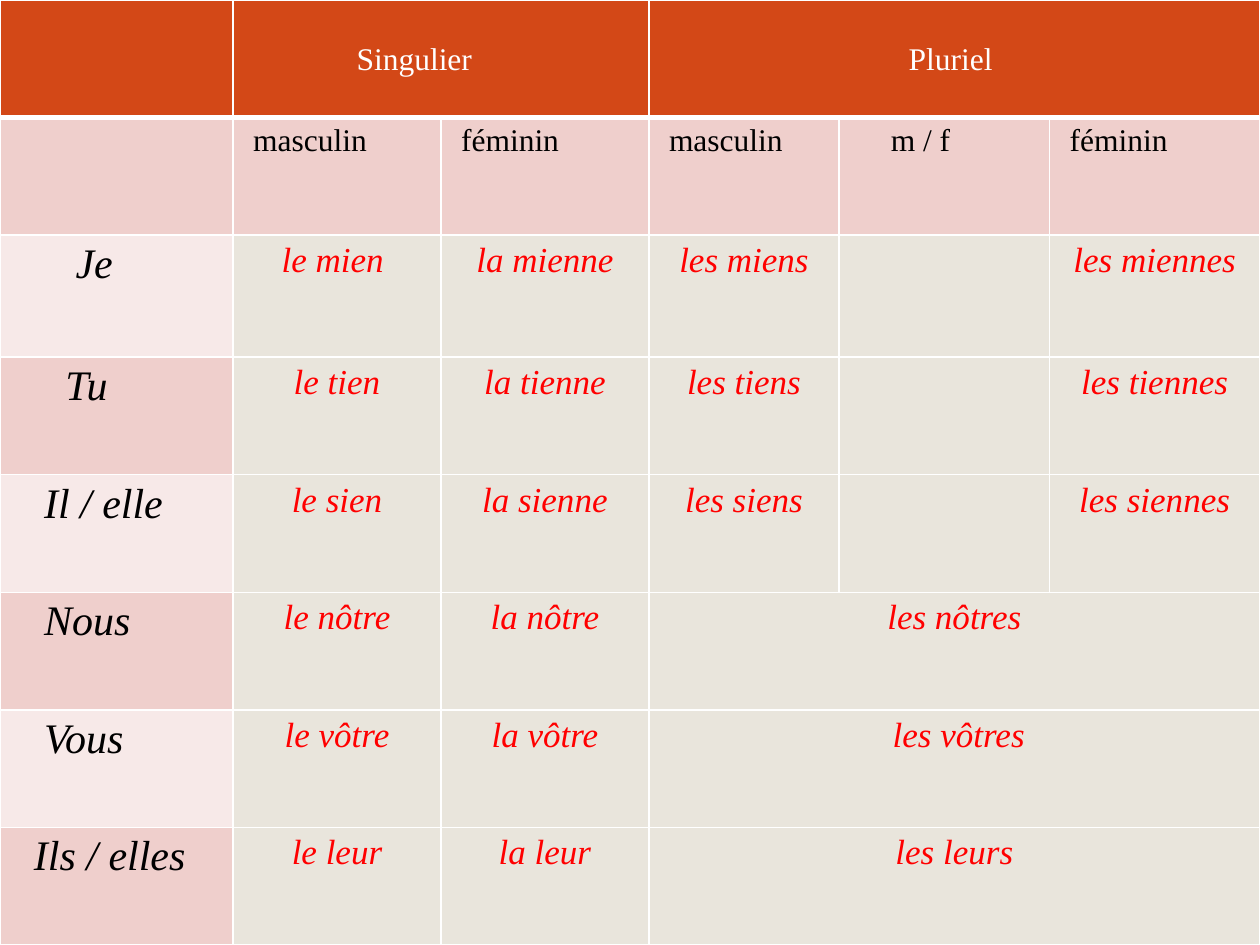
from lxml import etree
from pptx import Presentation
from pptx.dml.color import RGBColor
from pptx.enum import text
from pptx.oxml import ns
from pptx.util import Inches, Pt

COLORS = {
    "header": "D34817", "dark": "EFCFCC", "light": "F7E9E8", "body": "E9E5DC",
    "white": "FFFFFF", "black": "000000", "red": "FF0000",
}
COL_WIDTHS = [1.85, 1.65, 1.65, 1.51, 1.67, 1.67]
JE_HEIGHT = 0.97
ROW_HEIGHT = (7.5 - JE_HEIGHT) / 7
SUBHEADS = [("masculin", 0.06), ("féminin", 0.06), ("masculin", 0.06),
            ("m / f", 0.31), ("féminin", 0.06)]
# Pronoun, its indent, then the possessives by column
PRONOUNS = [
    ("Je", 0.5, ["le mien", "la mienne", "les miens", "", "les miennes"]),
    ("Tu", 0.42, ["le tien", "la tienne", "les tiens", "", "les tiennes"]),
    ("Il / elle", 0.25, ["le sien", "la sienne", "les siens", "", "les siennes"]),
    ("Nous", 0.25, ["le nôtre", "la nôtre", "les nôtres"]),
    ("Vous", 0.25, ["le vôtre", "la vôtre", "les vôtres"]),
    ("Ils / elles", 0.17, ["le leur", "la leur", "les leurs"]),
]


def rgb(name):
    return RGBColor.from_string(COLORS[name])


def write(cell, content, size=18, color="black", italic=False, center=False,
          indent=0, tail=0, drop=0):
    """Put formatted text in a cell; indent, tail and drop widen its margins."""
    cell.margin_left = Inches(0.1 + indent)
    cell.margin_right = Inches(0.1 + tail)
    cell.margin_top = Inches(0.05 + drop)
    p = cell.text_frame.paragraphs[0]
    p.alignment = text.PP_ALIGN.CENTER if center else text.PP_ALIGN.LEFT
    r = p.add_run()
    r.text = content
    r.font.name = "Times New Roman"
    r.font.size = Pt(size)
    r.font.italic = italic
    r.font.bold = False
    r.font.color.rgb = rgb(color)


class Deck:
    def __init__(self):
        self.prs = Presentation()
        self.prs.slide_width, self.prs.slide_height = Inches(10), Inches(7.5)
        self.s = self.prs.slides.add_slide(self.prs.slide_layouts[6])

    def table(self, widths, heights):
        tbl = self.s.shapes.add_table(
            len(heights), len(widths), 0, 0,
            Inches(sum(widths)), Inches(sum(heights))).table
        tbl.first_row = tbl.horz_banding = False
        for col, width in zip(tbl.columns, widths):
            col.width = Inches(width)
        for row, height in zip(tbl.rows, heights):
            row.height = Inches(height)
        return tbl

    def paint(self, cell, fill, bottom=1):
        cell.fill.solid()
        cell.fill.fore_color.rgb = rgb(fill)
        tcPr = cell._tc.get_or_add_tcPr()
        edges = {"lnL": 1, "lnR": 1, "lnT": 1, "lnB": bottom}
        for i, (tag, width) in enumerate(edges.items()):
            ln = etree.Element(ns.qn("a:" + tag), w=str(Pt(width)))
            solid = etree.SubElement(ln, ns.qn("a:solidFill"))
            etree.SubElement(solid, ns.qn("a:srgbClr"), val=COLORS["white"])
            tcPr.insert(i, ln)


def main():
    deck = Deck()
    heights = [ROW_HEIGHT] * 8
    heights[2] = JE_HEIGHT
    tbl = deck.table(COL_WIDTHS, heights)

    # Fills and borders
    for row in range(8):
        for col in range(6):
            if row == 0:
                deck.paint(tbl.cell(row, col), "header", bottom=3)
            elif row == 1 or (col == 0 and row % 2):
                deck.paint(tbl.cell(row, col), "dark")
            else:
                deck.paint(tbl.cell(row, col), "light" if col == 0 else "body")

    # Number and gender headings
    tbl.cell(0, 1).merge(tbl.cell(0, 2))
    tbl.cell(0, 3).merge(tbl.cell(0, 5))
    write(tbl.cell(0, 1), "Singulier", color="white", indent=0.88, drop=0.29)
    write(tbl.cell(0, 3), "Pluriel", color="white", center=True, tail=0.06, drop=0.29)
    for col, (label, indent) in enumerate(SUBHEADS, 1):
        write(tbl.cell(1, col), label, indent=indent)

    # Pronouns and possessives
    for row, (pronoun, indent, forms) in enumerate(PRONOUNS, 2):
        write(tbl.cell(row, 0), pronoun, size=24, italic=True, indent=indent)
        if len(forms) == 3:
            tbl.cell(row, 3).merge(tbl.cell(row, 5))
        for col, form in enumerate(forms, 1):
            if form:
                write(tbl.cell(row, col), form, size=20, color="red",
                      italic=True, center=True,
                      indent=0.07 if form == "les vôtres" else 0,
                      tail=0.07 if form == "le mien" else 0)

    deck.prs.save("out.pptx")


if __name__ == "__main__":
    main()
